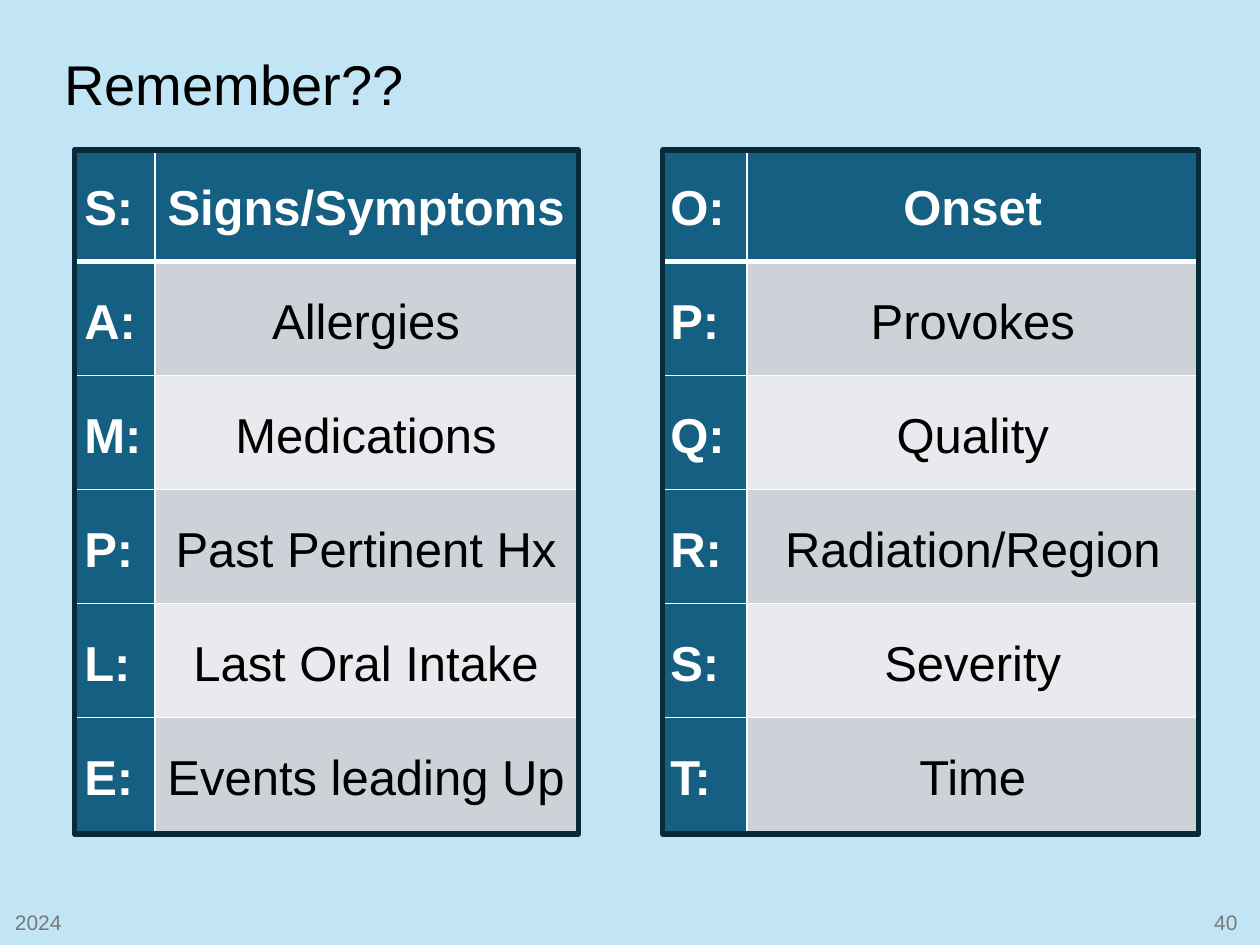
from lxml.etree import SubElement
from pptx import Presentation
from pptx.dml.color import RGBColor
from pptx.enum.shapes import MSO_SHAPE
from pptx.enum.text import MSO_ANCHOR as Anchor, PP_ALIGN as Align
from pptx.oxml.ns import qn
from pptx.util import Inches, Pt

TITLE = "Remember??"
FOOTERS = [("2024", 0.02, Align.LEFT), ("40", 7.67, Align.RIGHT)]
# Each mnemonic: table left, column widths, frame left and width, rows
MNEMONICS = [
    (0.6, (0.63, 3.35), (0.59, 4), [
        ("S:", "Signs/Symptoms"), ("A:", "Allergies"),
        ("M:", "Medications"), ("P:", "Past Pertinent Hx"),
        ("L:", "Last Oral Intake"), ("E:", "Events leading Up")]),
    (5.25, (0.68, 3.58), (5.26, 4.25), [
        ("O:", "Onset"), ("P:", "Provokes"), ("Q:", "Quality"),
        ("R:", "Radiation/Region"), ("S:", "Severity"), ("T:", "Time")]),
]
COLORS = {"background": "C1E5F5", "header": "156082", "odd": "CCD2D8",
          "even": "E8EAED", "frame": "092A39", "white": "FFFFFF",
          "black": "000000", "footer": "797979"}
TABLE_TOP, FRAME_TOP, TABLE_HEIGHT = 1.17, 1.19, 5.43


def rgb(name):
    return RGBColor.from_string(COLORS[name])


def write(tf, text, size, color, align=Align.LEFT, bold=False):
    tf.text = text
    tf.vertical_anchor = Anchor.MIDDLE
    p = tf.paragraphs[0]
    p.alignment = align
    p.font.name, p.font.size, p.font.bold = "Arial", Pt(size), bold
    p.font.color.rgb = rgb(color)
    return p


def set_borders(cell, bottom_width):
    """Draw white cell borders; they must precede the fill in the XML."""
    tcPr = cell._tc.get_or_add_tcPr()
    for side, width in (("L", 1), ("R", 1), ("T", 1), ("B", bottom_width)):
        ln = SubElement(tcPr, qn(f"a:ln{side}"), w=str(Pt(width)))
        fill = SubElement(ln, qn("a:solidFill"))
        SubElement(fill, qn("a:srgbClr"), val=COLORS["white"])


def format_cell(cell, text, row, col):
    is_header = row == 0 or col == 0
    set_borders(cell, 3 if row == 0 else 1)
    cell.fill.solid()
    cell.fill.fore_color.rgb = rgb(
        "header" if is_header else "odd" if row % 2 else "even")
    cell.margin_left = cell.margin_right = Inches(0.07)
    cell.margin_top = cell.margin_bottom = 0
    cell.vertical_anchor = Anchor.MIDDLE
    p = write(cell.text_frame, text, 28, "white" if is_header else "black",
              Align.CENTER if col else Align.LEFT, is_header)
    p.line_spacing, p.space_after = 1.15, Pt(3)


def add_mnemonic(s, left, widths, rows):
    table = s.shapes.add_table(
        len(rows), len(widths), Inches(left), Inches(TABLE_TOP),
        Inches(sum(widths)), Inches(TABLE_HEIGHT)).table
    for column, width in zip(table.columns, widths):
        column.width = Inches(width)
    for r, texts in enumerate(rows):
        for c, text in enumerate(texts):
            format_cell(table.cell(r, c), text, r, c)


def add_frame(s, left, width):
    frame = s.shapes.add_shape(
        MSO_SHAPE.RECTANGLE, Inches(left), Inches(FRAME_TOP),
        Inches(width), Inches(TABLE_HEIGHT))
    frame.shadow.inherit = False
    frame.fill.background()
    frame.line.color.rgb = rgb("frame")
    frame.line.width = Pt(3)


def main():
    prs = Presentation()
    prs.slide_width, prs.slide_height = Inches(10), Inches(7.5)
    s = prs.slides.add_slide(prs.slide_layouts[5])
    s.background.fill.solid()
    s.background.fill.fore_color.rgb = rgb("background")

    title = s.shapes.title
    title.left, title.top = Inches(0.41), Inches(0.14)
    title.width, title.height = Inches(9.25), Inches(1.1)
    write(title.text_frame, TITLE, 32, "black").line_spacing = 0.9

    for text, left, align in FOOTERS:
        box = s.shapes.add_textbox(
            Inches(left), Inches(7.22), Inches(2.25), Inches(0.2))
        box.text_frame.word_wrap = True
        write(box.text_frame, text, 12, "footer", align)

    for left, widths, _, rows in MNEMONICS:
        add_mnemonic(s, left, widths, rows)
    for _, _, frame, _ in MNEMONICS:
        add_frame(s, *frame)
    prs.save("out.pptx")


if __name__ == "__main__":
    main()
